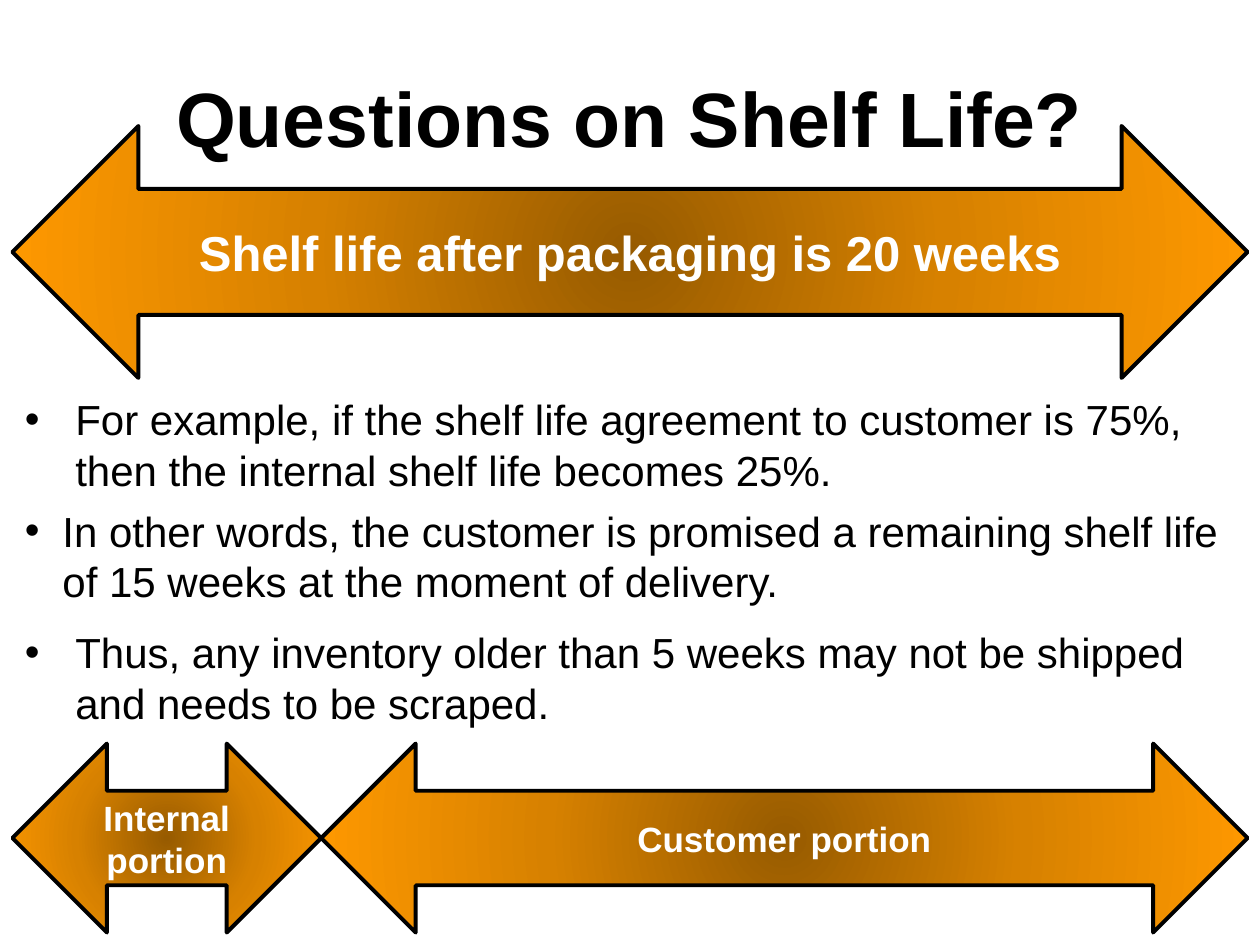
from lxml import etree
from pptx import Presentation
from pptx.dml.color import RGBColor
from pptx.enum import shapes, text
from pptx.oxml import parse_xml
from pptx.oxml.ns import nsdecls, qn
from pptx.util import Cm, Pt

TITLE = "Questions on Shelf Life?"
# text, hanging indent (cm), space before (pt)
POINTS = [
    ("For example, if the shelf life agreement to customer is 75%, "
     "then the internal shelf life becomes 25%.", 1.02, 12),
    ("In other words, the customer is promised a remaining shelf life "
     "of 15 weeks at the moment of delivery.", 0.76, 6),
    ("Thus, any inventory older than 5 weeks may not be shipped "
     "and needs to be scraped.", 1.02, 12),
]
WHOLE = "Shelf life after packaging is 20 weeks"
PARTS = [("Internal portion", 5), ("Customer portion", 15)]  # weeks

THEME = {
    "font": "Arial", "ink": "000000", "pale": "FFFFFF",
    "glow": [(0, "975B00"), (50, "D78100"), (100, "FF9900")],
    "title": 44, "body": 24, "whole": 28, "part": 20, "line": 2.25,
}
WIDE, HIGH = 25.4, 19.05
EDGE = 0.25
SPAN = WIDE - 2 * EDGE


def write(para, words, size, color="ink", bold=False, align=None):
    run = para.add_run()
    run.text = words
    font = run.font
    font.name, font.size, font.bold = THEME["font"], Pt(size), bold
    font.color.rgb = RGBColor.from_string(THEME[color])
    para.alignment = align


def glow(shape):
    """Fill from a dark centre to a bright rim."""
    stops = "".join(
        f'<a:gs pos="{at * 1000}"><a:srgbClr val="{color}"/></a:gs>'
        for at, color in THEME["glow"])
    fill = parse_xml(
        f'<a:gradFill {nsdecls("a")} rotWithShape="1"><a:gsLst>{stops}</a:gsLst>'
        '<a:path path="circle"><a:fillToRect l="50000" t="50000" '
        'r="50000" b="50000"/></a:path></a:gradFill>')
    shape._element.spPr.find(qn("a:prstGeom")).addnext(fill)


def arrow(slide, words, left, top, width, height, size):
    shape = slide.shapes.add_shape(
        shapes.MSO_SHAPE.LEFT_RIGHT_ARROW,
        Cm(left), Cm(top), Cm(width), Cm(height))
    shape.shadow.inherit = False
    glow(shape)
    shape.line.color.rgb = RGBColor.from_string(THEME["ink"])
    shape.line.width = Pt(THEME["line"])
    frame = shape.text_frame
    frame.word_wrap = True
    frame.vertical_anchor = text.MSO_ANCHOR.MIDDLE
    write(frame.paragraphs[0], words, size, color="pale", bold=True,
          align=text.PP_ALIGN.CENTER)


def bullet(para, indent):
    props = para._p.get_or_add_pPr()
    props.set("marL", str(Cm(indent)))
    props.set("indent", str(-Cm(indent)))
    etree.SubElement(props, qn("a:buFont")).set("typeface", THEME["font"])
    etree.SubElement(props, qn("a:buChar")).set("char", "•")


def head(slide):
    title = slide.shapes.title
    title.left, title.top = Cm(1.27), Cm(0.76)
    title.width, title.height = Cm(WIDE - 2 * 1.27), Cm(3.18)
    frame = title.text_frame
    frame.vertical_anchor = text.MSO_ANCHOR.MIDDLE
    write(frame.paragraphs[0], TITLE, THEME["title"], bold=True,
          align=text.PP_ALIGN.CENTER)


def body(slide):
    box = slide.shapes.add_textbox(Cm(EDGE), Cm(7.62), Cm(SPAN), Cm(7.37))
    frame = box.text_frame
    frame.word_wrap = True
    frame.vertical_anchor = text.MSO_ANCHOR.MIDDLE
    for i, (words, indent, gap) in enumerate(POINTS):
        para = frame.add_paragraph() if i else frame.paragraphs[0]
        write(para, words, THEME["body"])
        para.space_before = Pt(gap)
        bullet(para, indent)


def main():
    deck = Presentation()
    deck.slide_width, deck.slide_height = Cm(WIDE), Cm(HIGH)
    slide = deck.slides.add_slide(deck.slide_layouts[5])
    head(slide)
    body(slide)
    arrow(slide, WHOLE, EDGE, 2.54, SPAN, 5.08, THEME["whole"])
    total = sum(weeks for _, weeks in PARTS)
    left = EDGE
    for words, weeks in PARTS:
        width = SPAN * weeks / total
        arrow(slide, words, left, 14.99, width, 3.81, THEME["part"])
        left += width
    deck.save("out.pptx")


if __name__ == "__main__":
    main()
